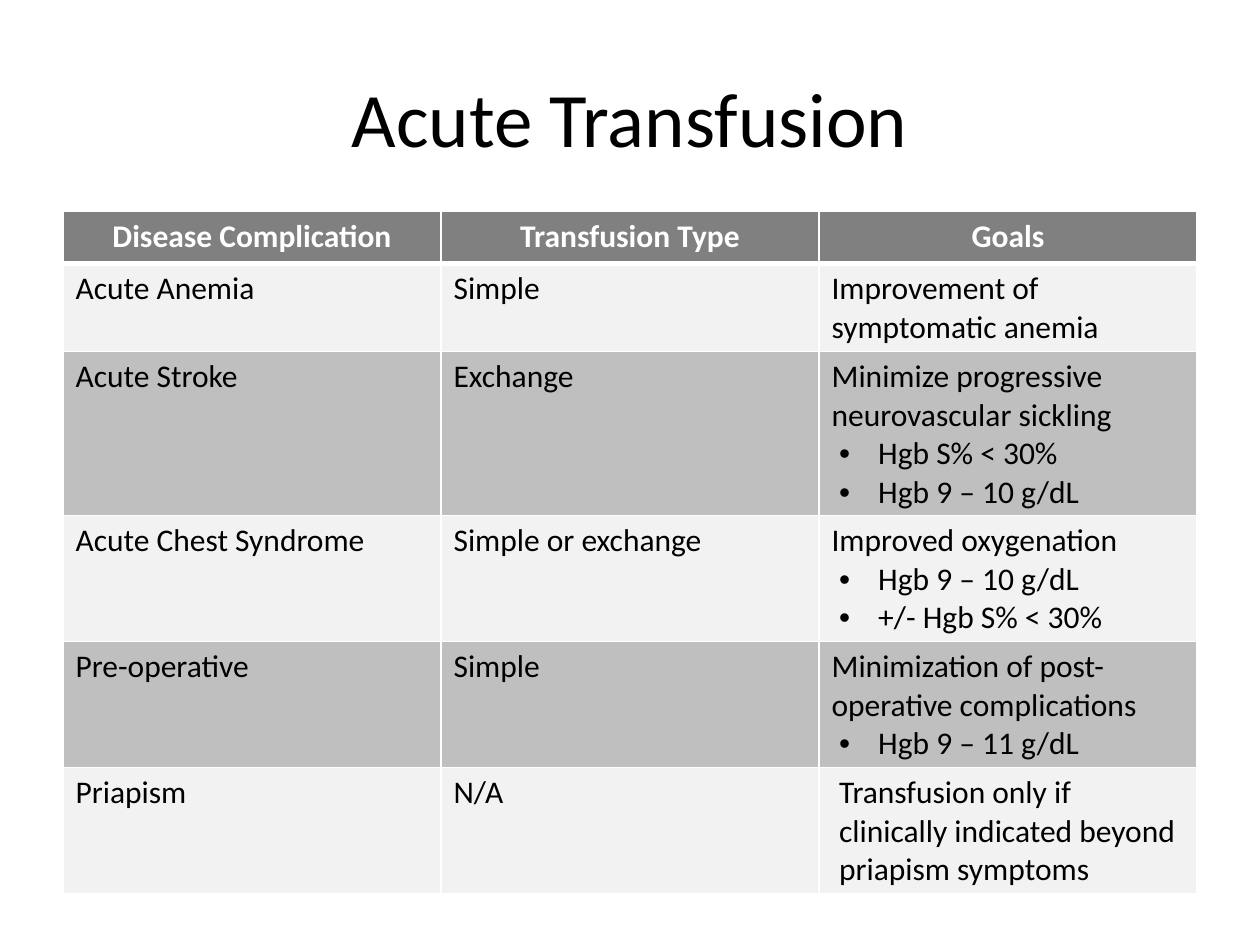
from dataclasses import dataclass

from lxml import etree
from pptx import Presentation
from pptx import util as u
from pptx.dml.color import RGBColor
from pptx.enum import text
from pptx.oxml import ns


@dataclass(frozen=True)
class Theme:
    font: str = "Calibri"
    ink: str = "000000"
    white: str = "FFFFFF"
    head: str = "808080"
    bands: tuple = ("F2F2F2", "BFBFBF")
    title: int = 44
    body: int = 18
    thin: int = 1
    thick: int = 3


THEME = Theme()
WIDE, HIGH = 10, 7.5
EDGE = WIDE / 20
ROW = 0.41

# Goals: the first line is plain, those marked "•" are bulleted,
# and those marked ">" are only indented.
HEADS = ("Disease Complication", "Transfusion Type", "Goals")
ROWS = (
    ("Acute Anemia", "Simple", ("Improvement of symptomatic anemia",)),
    ("Acute Stroke", "Exchange",
     ("Minimize progressive neurovascular sickling",
      "•Hgb S% < 30%", "•Hgb 9 – 10 g/dL")),
    ("Acute Chest Syndrome", "Simple or exchange",
     ("Improved oxygenation", "•Hgb 9 – 10 g/dL", "•+/- Hgb S% < 30%")),
    ("Pre-operative", "Simple",
     ("Minimization of post-operative complications", "•Hgb 9 – 11 g/dL")),
    ("Priapism", "N/A",
     (">Transfusion only if clinically indicated beyond priapism symptoms",)),
)


def style(para, size, color, bold=False):
    for run in para.runs:
        font = run.font
        font.name, font.size, font.bold = THEME.font, u.Pt(size), bold
        font.color.rgb = RGBColor.from_string(color)


def indent(para, left, hang, mark=None):
    para.level = 1
    props = para._p.get_or_add_pPr()
    props.set("marL", str(u.Inches(left)))
    props.set("indent", str(u.Inches(hang)))
    if mark:
        etree.SubElement(props, ns.qn("a:buFont")).set("typeface", "Arial")
        etree.SubElement(props, ns.qn("a:buChar")).set("char", mark)


def border(cell, top, base):
    """Rule all four sides in white; the lines must come before the fill."""
    props = cell._tc.get_or_add_tcPr()
    sides = (("L", THEME.thin), ("R", THEME.thin), ("T", top), ("B", base))
    for spot, (side, width) in enumerate(sides):
        line = etree.Element(ns.qn(f"a:ln{side}"), w=str(u.Pt(width)))
        fill = etree.SubElement(line, ns.qn("a:solidFill"))
        etree.SubElement(fill, ns.qn("a:srgbClr")).set("val", THEME.white)
        props.insert(spot, line)


def write(cell, lines, color, bold):
    frame = cell.text_frame
    for num, line in enumerate(lines):
        para = frame.add_paragraph() if num else frame.paragraphs[0]
        para.text = line.lstrip("•>")
        if line.startswith("•"):
            indent(para, 0.37, -0.31, "•")
        elif line.startswith(">"):
            indent(para, 0.06, 0)
        if bold:
            para.alignment = text.PP_ALIGN.CENTER
        style(para, THEME.body, color, bold)


def title(slide, box):
    frame = slide.shapes.add_textbox(*map(u.Inches, box)).text_frame
    frame.word_wrap = True
    frame.vertical_anchor = text.MSO_ANCHOR.MIDDLE
    para = frame.paragraphs[0]
    para.text = "Acute Transfusion"
    para.alignment = text.PP_ALIGN.CENTER
    style(para, THEME.title, THEME.ink)


def grid(slide, box):
    data = (HEADS,) + ROWS
    table = slide.shapes.add_table(
        len(data), len(HEADS), *map(u.Inches, box)).table
    for row, items in enumerate(data):
        head = row == 0
        shade = THEME.head if head else THEME.bands[(row - 1) % 2]
        color = THEME.white if head else THEME.ink
        # The heavy rule lies between the heading and the first row.
        top = THEME.thick if row == 1 else THEME.thin
        base = THEME.thick if head else THEME.thin
        for col, item in enumerate(items):
            cell = table.cell(row, col)
            cell.fill.solid()
            cell.fill.fore_color.rgb = RGBColor.from_string(shade)
            border(cell, top, base)
            lines = (item,) if isinstance(item, str) else item
            write(cell, lines, color, head)


def main():
    deck = Presentation()
    deck.slide_width, deck.slide_height = u.Inches(WIDE), u.Inches(HIGH)
    slide = deck.slides.add_slide(deck.slide_layouts[6])
    span = WIDE - 2 * EDGE
    title(slide, (EDGE, HIGH * 0.04, span, HIGH / 6))
    # Rows start at one line and grow with their text.
    grid(slide, (EDGE, 1.68, span, ROW * (len(ROWS) + 1)))
    deck.save("out.pptx")


if __name__ == "__main__":
    main()
